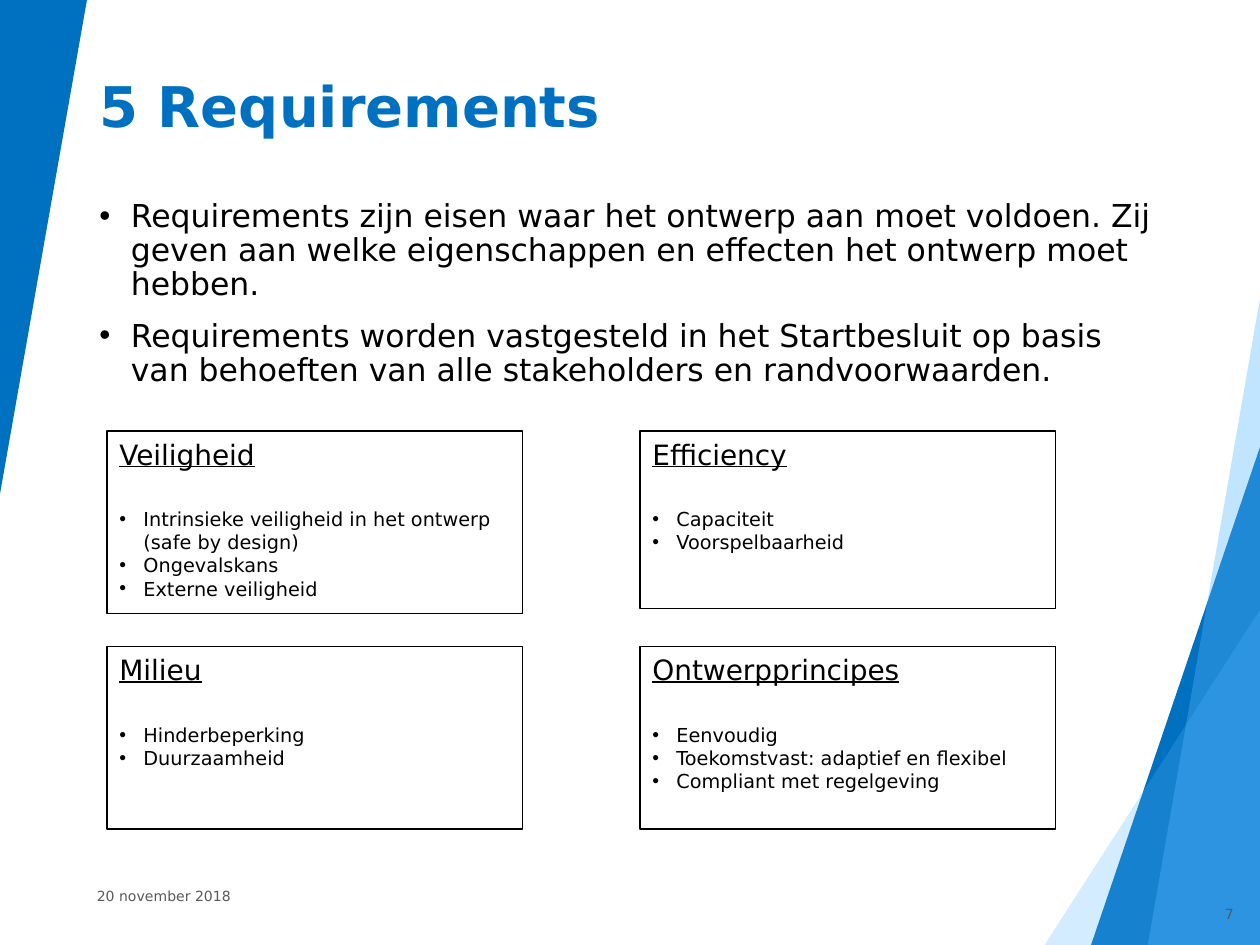
from lxml import etree
from pptx import Presentation
from pptx.dml.color import RGBColor
from pptx.enum.shapes import MSO_SHAPE
from pptx.enum.text import MSO_ANCHOR, PP_ALIGN
from pptx.oxml.ns import qn
from pptx.util import Inches, Pt

RECTANGLE = MSO_SHAPE.RECTANGLE
TRIANGLE = MSO_SHAPE.RIGHT_TRIANGLE
TOP, MIDDLE = MSO_ANCHOR.TOP, MSO_ANCHOR.MIDDLE
LEFT, RIGHT = PP_ALIGN.LEFT, PP_ALIGN.RIGHT

BLUE = RGBColor(0x00, 0x70, 0xC0)
LIGHT_BLUE = RGBColor(0x57, 0xB7, 0xFF)
BLACK = RGBColor(0x00, 0x00, 0x00)
GRAY = RGBColor(0x59, 0x59, 0x59)
FONT = "DejaVu Sans"

WIDTH, HEIGHT = 10, 7.5
MARGIN = 0.69
CONTENT_WIDTH = WIDTH - 2 * MARGIN

# Grid of requirement cards
GRID_LEFT, GRID_TOP = 0.85, 3.42
COLUMN_STEP, ROW_STEP = 4.23, 1.71
CARD_WIDTH, CARD_HEIGHT = 3.3, 1.45

INTRODUCTION = [
    "Requirements zijn eisen waar het ontwerp aan moet voldoen. Zij geven "
    "aan welke eigenschappen en effecten het ontwerp moet hebben.",
    "Requirements worden vastgesteld in het Startbesluit op basis van "
    "behoeften van alle stakeholders en randvoorwaarden.",
]

# Column, row, height, heading, points
CARDS = [
    (0, 0, CARD_HEIGHT, "Veiligheid",
     ["Intrinsieke veiligheid in het ontwerp (safe by design)",
      "Ongevalskans", "Externe veiligheid"]),
    (1, 0, 1.41, "Efficiency", ["Capaciteit", "Voorspelbaarheid"]),
    (0, 1, CARD_HEIGHT, "Milieu", ["Hinderbeperking", "Duurzaamheid"]),
    (1, 1, CARD_HEIGHT, "Ontwerpprincipes",
     ["Eenvoudig", "Toekomstvast: adaptief en flexibel",
      "Compliant met regelgeving"]),
]


def add_bullet(paragraph, indent):
    properties = paragraph._p.get_or_add_pPr()
    properties.set("marL", str(Inches(indent)))
    properties.set("indent", str(-Inches(indent)))
    etree.SubElement(properties, qn("a:buFont"), typeface="Arial")
    etree.SubElement(properties, qn("a:buChar"), char="•")


def write(frame, text, size, color=BLACK, bold=False, underline=False,
          align=LEFT, bullet=0, spacing=1.0, before=0, after=0):
    """Fill the first empty paragraph, or add one below the text."""
    first = frame.paragraphs[0]
    paragraph = frame.add_paragraph() if first.runs else first
    if bullet:
        add_bullet(paragraph, bullet)
    paragraph.alignment = align
    paragraph.line_spacing = spacing
    paragraph.space_before = Pt(before)
    paragraph.space_after = Pt(after)
    run = paragraph.add_run()
    run.text = text
    run.font.name = FONT
    run.font.size = Pt(size)
    run.font.bold = bold
    run.font.underline = underline
    run.font.color.rgb = color


def add_text_frame(slide, left, top, width, height, anchor=MIDDLE):
    box = slide.shapes.add_textbox(
        Inches(left), Inches(top), Inches(width), Inches(height))
    box.text_frame.word_wrap = True
    box.text_frame.vertical_anchor = anchor
    return box.text_frame


def add_triangle(slide, left, top, width, height, color, flip, opacity=100):
    shape = slide.shapes.add_shape(
        TRIANGLE, Inches(left), Inches(top), Inches(width), Inches(height))
    shape.shadow.inherit = False
    shape.line.fill.background()
    shape.fill.solid()
    shape.fill.fore_color.rgb = color
    shape._element.spPr.find(qn("a:xfrm")).set(flip, "1")
    if opacity < 100:
        fill_color = shape._element.spPr.find(".//" + qn("a:srgbClr"))
        etree.SubElement(fill_color, qn("a:alpha"), val=str(opacity * 1000))


def add_corner_triangle(slide, width, height, color, opacity=100):
    """Triangle standing in the bottom right corner."""
    add_triangle(slide, WIDTH - width, HEIGHT - height, width, height,
                 color, "flipH", opacity)


def add_card(slide, column, row, height, heading, points):
    shape = slide.shapes.add_shape(
        RECTANGLE, Inches(GRID_LEFT + column * COLUMN_STEP),
        Inches(GRID_TOP + row * ROW_STEP), Inches(CARD_WIDTH), Inches(height))
    shape.shadow.inherit = False
    shape.fill.background()
    shape.line.color.rgb = BLACK
    shape.line.width = Pt(0.75)
    frame = shape.text_frame
    frame.word_wrap = True
    frame.vertical_anchor = TOP
    write(frame, heading, 16, underline=True, after=21)
    for point in points:
        write(frame, point, 11, bullet=0.19)


def main():
    presentation = Presentation()
    presentation.slide_width = Inches(WIDTH)
    presentation.slide_height = Inches(HEIGHT)
    slide = presentation.slides.add_slide(presentation.slide_layouts[6])

    # Decorative edges
    add_corner_triangle(slide, 1.34, 3.95, BLUE)
    add_corner_triangle(slide, 1.71, 2.66, LIGHT_BLUE, opacity=25)
    add_triangle(slide, 0, 0, MARGIN, 3.92, BLUE, "flipV")
    add_corner_triangle(slide, 0.89, 5.13, LIGHT_BLUE, opacity=36)

    # Title
    title = add_text_frame(slide, MARGIN, 0.4, CONTENT_WIDTH, 0.93)
    write(title, "5 Requirements", 32, color=BLUE, bold=True, spacing=0.9)

    # Introduction
    body = add_text_frame(slide, MARGIN, 1.54, CONTENT_WIDTH, 1.7, anchor=TOP)
    for index, text in enumerate(INTRODUCTION):
        write(body, text, 18, bullet=0.25, spacing=0.9,
              before=10 if index else 0)

    # Requirement cards
    for card in CARDS:
        add_card(slide, *card)

    # Footer
    date = add_text_frame(slide, 0.67, 6.91, 2.25, 0.4)
    write(date, "20 november 2018", 8, color=GRAY)
    number = add_text_frame(slide, 8.32, 7.05, 1.57, 0.4)
    write(number, "7", 8, color=GRAY, align=RIGHT)

    presentation.save("out.pptx")


if __name__ == "__main__":
    main()
